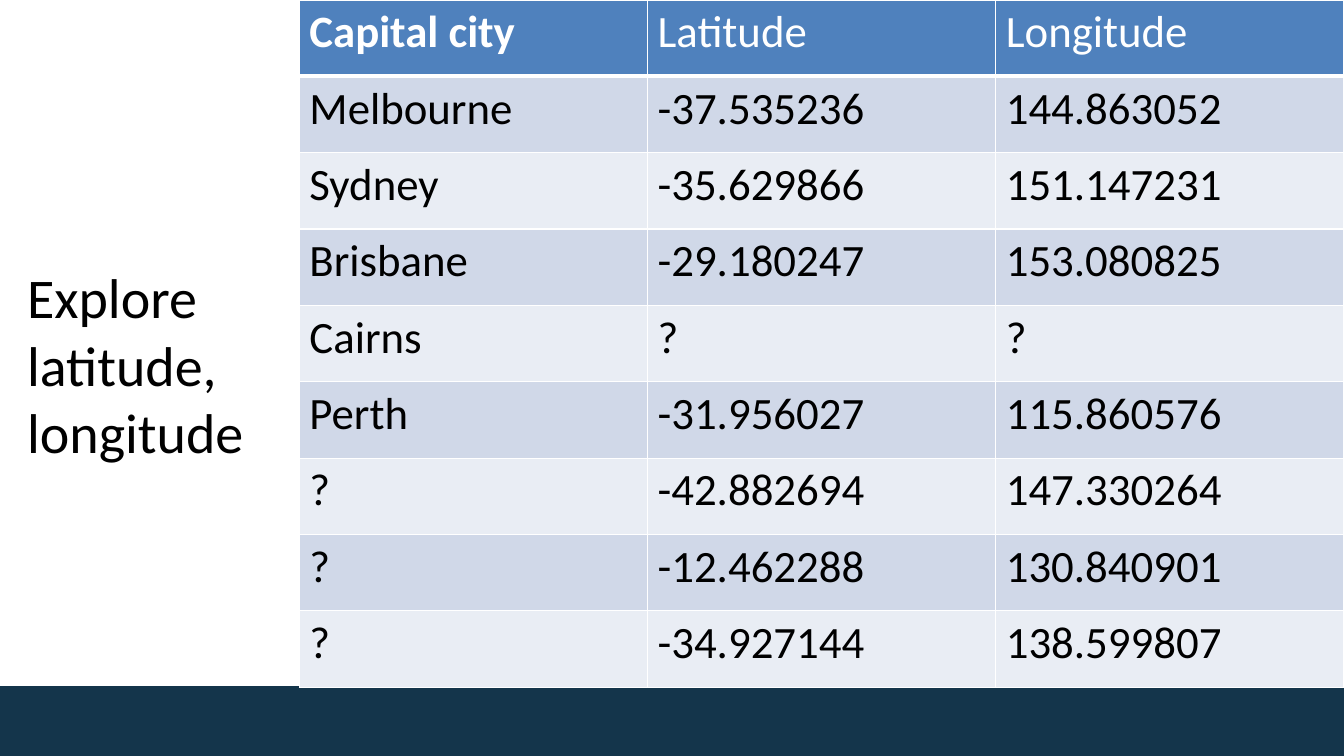
"""Build the slide on the latitude and longitude of Australian cities."""
from typing import NamedTuple

from lxml.etree import SubElement
from pptx import Presentation
from pptx.dml.color import RGBColor
from pptx.enum.shapes import MSO_SHAPE
from pptx.enum.text import MSO_AUTO_SIZE
from pptx.oxml.ns import qn
from pptx.slide import Slide
from pptx.table import _Cell
from pptx.text.text import TextFrame
from pptx.util import Pt

NAVY = RGBColor(0x14, 0x35, 0x4B)
BLUE = RGBColor(0x4F, 0x81, 0xBD)
BAND_DARK = RGBColor(0xD0, 0xD8, 0xE8)
BAND_LIGHT = RGBColor(0xE9, 0xED, 0xF4)
WHITE = RGBColor(0xFF, 0xFF, 0xFF)
BLACK = RGBColor(0x00, 0x00, 0x00)

FONT = "Calibri"
SLIDE_WIDTH, SLIDE_HEIGHT = 960, 540
FOOTER_TOP = 491.04
TABLE_LEFT = 213.84


class City(NamedTuple):
    """One table row: a city and its coordinates."""

    name: str
    latitude: str
    longitude: str


HEADINGS = City("Capital city", "Latitude", "Longitude")
CITIES = [
    City("Melbourne", "-37.535236", "144.863052"),
    City("Sydney", "-35.629866", "151.147231"),
    City("Brisbane", "-29.180247", "153.080825"),
    City("Cairns", "?", "?"),
    City("Perth", "-31.956027", "115.860576"),
    City("?", "-42.882694", "147.330264"),
    City("?", "-12.462288", "130.840901"),
    City("?", "-34.927144", "138.599807"),
]


def write(frame: TextFrame, wording: str, size: float, color: RGBColor, bold: bool = False) -> None:
    """Add one formatted run to the first paragraph."""
    run = frame.paragraphs[0].add_run()
    run.text = wording
    run.font.name = FONT
    run.font.size = Pt(size)
    run.font.bold = bold
    run.font.color.rgb = color


def add_borders(cell: _Cell, top: float, bottom: float) -> None:
    """Give a cell white borders, one point wide at the sides."""
    properties = cell._tc.get_or_add_tcPr()
    for side, width in (("lnL", 1), ("lnR", 1), ("lnT", top), ("lnB", bottom)):
        border = SubElement(properties, qn(f"a:{side}"), w=str(Pt(width)))
        paint = SubElement(border, qn("a:solidFill"))
        SubElement(paint, qn("a:srgbClr"), val=str(WHITE))


def add_footer(slide: Slide) -> None:
    """Draw the dark band along the bottom."""
    footer = slide.shapes.add_shape(
        MSO_SHAPE.RECTANGLE, Pt(0), Pt(FOOTER_TOP), Pt(SLIDE_WIDTH), Pt(SLIDE_HEIGHT - FOOTER_TOP)
    )
    footer.shadow.inherit = False
    footer.fill.solid()
    footer.fill.fore_color.rgb = NAVY
    footer.line.color.rgb = NAVY
    footer.line.width = Pt(2)


def add_coordinates(slide: Slide) -> None:
    """Draw the table of cities and coordinates."""
    rows = [HEADINGS, *CITIES]
    coordinates = slide.shapes.add_table(
        len(rows), len(HEADINGS), Pt(TABLE_LEFT), Pt(0), Pt(SLIDE_WIDTH - TABLE_LEFT), Pt(FOOTER_TOP)
    ).table
    for row, city in enumerate(rows):
        heading = row == 0
        band = BLUE if heading else BAND_DARK if row % 2 else BAND_LIGHT
        for column, wording in enumerate(city):
            cell = coordinates.cell(row, column)
            add_borders(cell, top=3 if row == 1 else 1, bottom=3 if heading else 1)
            cell.fill.solid()
            cell.fill.fore_color.rgb = band
            write(cell.text_frame, wording, 32, WHITE if heading else BLACK, heading and column == 0)


def add_title(slide: Slide) -> None:
    """Place the title left of the table."""
    title = slide.shapes.add_textbox(Pt(12.24), Pt(184.32), Pt(180.72), Pt(152.64)).text_frame
    title.word_wrap = True
    title.auto_size = MSO_AUTO_SIZE.SHAPE_TO_FIT_TEXT
    write(title, "Explore latitude, longitude", 40, BLACK)


def main() -> None:
    """Build and save the presentation."""
    presentation = Presentation()
    presentation.slide_width = Pt(SLIDE_WIDTH)
    presentation.slide_height = Pt(SLIDE_HEIGHT)
    slide = presentation.slides.add_slide(presentation.slide_layouts[6])
    add_footer(slide)
    add_coordinates(slide)
    add_title(slide)
    presentation.save("out.pptx")


if __name__ == "__main__":
    main()
